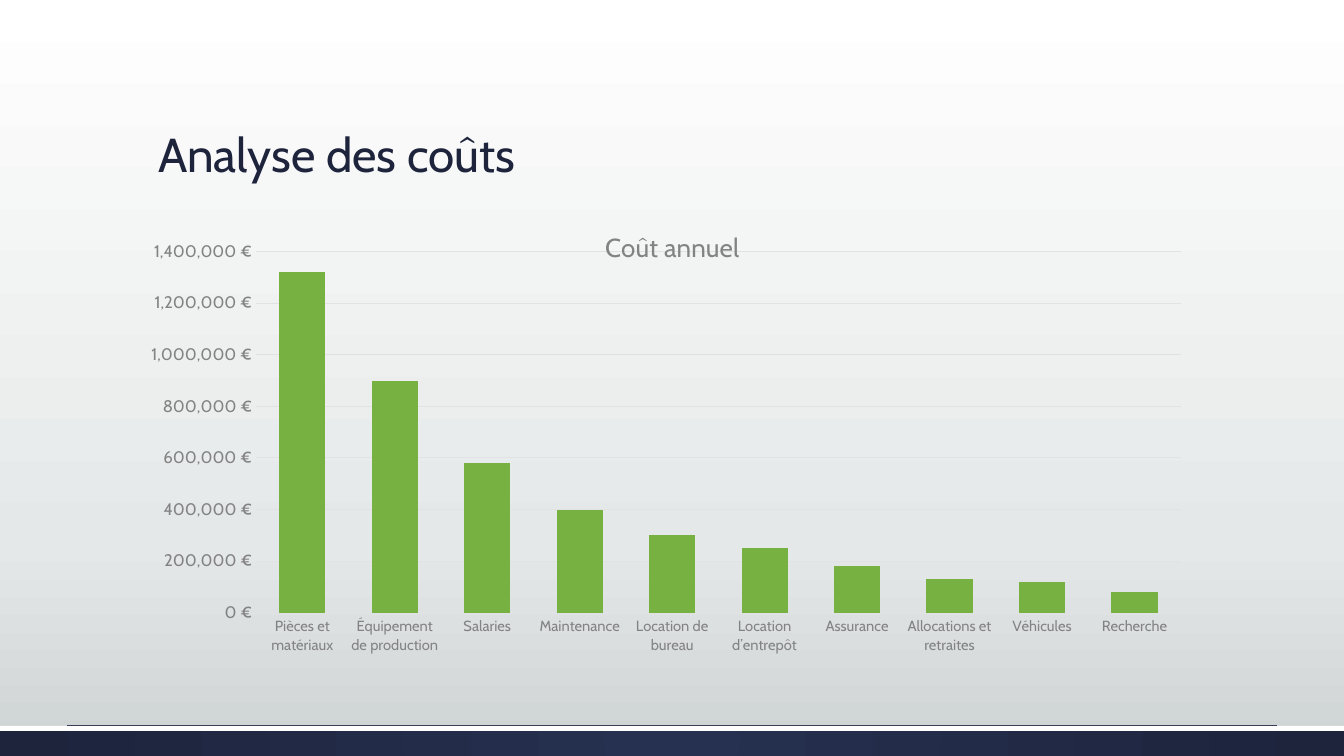
import pptx
import pptx.chart.data
import pptx.dml.color
import pptx.enum.chart
import pptx.enum.shapes
import pptx.enum.text
import pptx.oxml
import pptx.oxml.ns
import pptx.util

Pt = pptx.util.Pt
qn = pptx.oxml.ns.qn
RGBColor = pptx.dml.color.RGBColor

NAVY = RGBColor(0x1D, 0x24, 0x3C)
NAVY_LIGHT = RGBColor(0x26, 0x30, 0x50)
WHITE = RGBColor(0xFF, 0xFF, 0xFF)
MIST = RGBColor(0xE5, 0xE8, 0xE8)
SILVER = RGBColor(0xCD, 0xD2, 0xD2)
LABEL_GREY = RGBColor(0x83, 0x83, 0x83)
GRID_GREY = RGBColor(0xE2, 0xE2, 0xE2)
GREEN = RGBColor(0x77, 0xB1, 0x42)

WIDTH, HEIGHT = 960, 540
MARGIN, CONTENT_WIDTH = 105.84, 748.8
FOOTER_TOP = 518.4

ANNUAL_COSTS = {
    "Pièces et matériaux": 1320000,
    "Équipement de production": 900000,
    "Salaries": 580000,
    "Maintenance": 400000,
    "Location de bureau": 300000,
    "Location d’entrepôt": 250000,
    "Assurance": 180000,
    "Allocations et retraites": 130000,
    "Véhicules": 120000,
    "Recherche": 80000,
}


class SlideBuilder:
    def __init__(self, slide, font_name="Cabin"):
        self.slide = slide
        self.font_name = font_name

    def style_font(self, font, size, color):
        font.name = self.font_name
        font.size = Pt(size)
        font.bold = False
        font.color.rgb = color

    def gradient(self, fill, owner, stops, circular=False):
        """Fill with (percent, colour) stops, top to bottom or from the centre."""
        fill.gradient()
        fill.gradient_angle = 270
        grad = owner.find(".//" + qn("a:gradFill"))
        stop_list = grad.find(qn("a:gsLst"))
        for old_stop in list(stop_list):
            stop_list.remove(old_stop)
        for percent, color in stops:
            stop = pptx.oxml.ns.nsdecls("a")
            stop_list.append(pptx.oxml.parse_xml(
                f'<a:gs {stop} pos="{percent * 1000}"><a:srgbClr val="{color}"/></a:gs>'))
        if circular:
            grad.replace(grad.find(qn("a:lin")), pptx.oxml.parse_xml(
                f'<a:path {pptx.oxml.ns.nsdecls("a")} path="circle">'
                '<a:fillToRect l="50000" t="50000" r="50000" b="50000"/></a:path>'))

    def background(self, stops):
        self.gradient(self.slide.background.fill, self.slide._element, stops)

    def band(self, top, height, color=None, stops=None):
        """Draw a full-width strip, plain or with a circular gradient."""
        strip = self.slide.shapes.add_shape(
            pptx.enum.shapes.MSO_SHAPE.RECTANGLE, 0, Pt(top), Pt(WIDTH), Pt(height))
        strip.shadow.inherit = False
        strip.line.fill.background()
        if stops:
            self.gradient(strip.fill, strip._element.spPr, stops, circular=True)
        else:
            strip.fill.solid()
            strip.fill.fore_color.rgb = color

    def rule(self, left, right, y, color):
        line = self.slide.shapes.add_connector(
            pptx.enum.shapes.MSO_CONNECTOR.STRAIGHT, Pt(left), Pt(y), Pt(right), Pt(y))
        line.line.color.rgb = color
        line.line.width = Pt(0.75)
        line._element.spPr.append(pptx.oxml.parse_xml(
            f'<a:effectLst {pptx.oxml.ns.nsdecls("a")}/>'))

    def title(self, text, top, height):
        frame = self.slide.shapes.add_textbox(
            Pt(MARGIN), Pt(top), Pt(CONTENT_WIDTH), Pt(height)).text_frame
        frame.word_wrap = True
        frame.vertical_anchor = pptx.enum.text.MSO_ANCHOR.BOTTOM
        frame.text = text
        heading = frame.paragraphs[0]
        heading.line_spacing = 0.9
        self.style_font(heading.runs[0].font, 34, NAVY)

    def column_chart(self, name, values, top, height):
        data = pptx.chart.data.CategoryChartData(number_format='#,##0\\ "€"')
        data.categories = list(values)
        data.add_series(name, list(values.values()))
        chart = self.slide.shapes.add_chart(
            pptx.enum.chart.XL_CHART_TYPE.COLUMN_CLUSTERED,
            Pt(MARGIN), Pt(top), Pt(CONTENT_WIDTH), Pt(height), data).chart
        self.style_font(chart.font, 10, LABEL_GREY)
        chart.has_legend = False
        chart.has_title = True
        heading = chart.chart_title.text_frame
        heading.text = name
        self.style_font(heading.paragraphs[0].runs[0].font, 18.6, LABEL_GREY)

        columns = chart.plots[0]
        columns.gap_width = 100
        columns.vary_by_categories = False
        columns.series[0].format.fill.solid()
        columns.series[0].format.fill.fore_color.rgb = GREEN

        for axis, size in ((chart.category_axis, 10.5), (chart.value_axis, 12)):
            axis.major_tick_mark = pptx.enum.chart.XL_TICK_MARK.NONE
            axis.minor_tick_mark = pptx.enum.chart.XL_TICK_MARK.NONE
            self.style_font(axis.tick_labels.font, size, LABEL_GREY)
        costs = chart.value_axis
        costs.minimum_scale, costs.maximum_scale, costs.major_unit = 0, 1400000, 200000
        costs.tick_labels.number_format = '#,##0\\ "€"'
        costs.tick_labels.number_format_is_linked = False
        costs.format.line.fill.background()
        for line in (chart.category_axis.format.line, costs.major_gridlines.format.line):
            line.color.rgb = GRID_GREY
            line.width = Pt(0.75)
        self.place_plot(chart, x=0.103, y=0.092, w=0.882, h=0.795)

    def place_plot(self, chart, **fractions):
        """Fix the inner plot area as fractions of the chart."""
        plot_area = chart._chartSpace.find(".//" + qn("c:plotArea"))
        for old_layout in plot_area.findall(qn("c:layout")):
            plot_area.remove(old_layout)
        sizes = "".join(f'<c:{key} val="{value}"/>' for key, value in fractions.items())
        plot_area.insert(0, pptx.oxml.parse_xml(
            f'<c:layout {pptx.oxml.ns.nsdecls("c")}><c:manualLayout>'
            '<c:layoutTarget val="inner"/><c:xMode val="edge"/><c:yMode val="edge"/>'
            f'{sizes}</c:manualLayout></c:layout>'))


def main():
    deck = pptx.Presentation()
    deck.slide_width, deck.slide_height = Pt(WIDTH), Pt(HEIGHT)
    builder = SlideBuilder(deck.slides.add_slide(deck.slide_layouts[6]))
    builder.background([(0, WHITE), (72, MIST), (100, SILVER)])
    builder.band(FOOTER_TOP, HEIGHT - FOOTER_TOP, stops=[(0, NAVY_LIGHT), (100, NAVY)])
    builder.rule(48, WIDTH - 48, 518, NAVY)
    builder.band(FOOTER_TOP, 3.6, WHITE)
    builder.title("Analyse des coûts", 36.72, 97.2)
    builder.column_chart("Coût annuel", ANNUAL_COSTS, 149.76, 324.72)
    deck.save("out.pptx")


if __name__ == "__main__":
    main()
